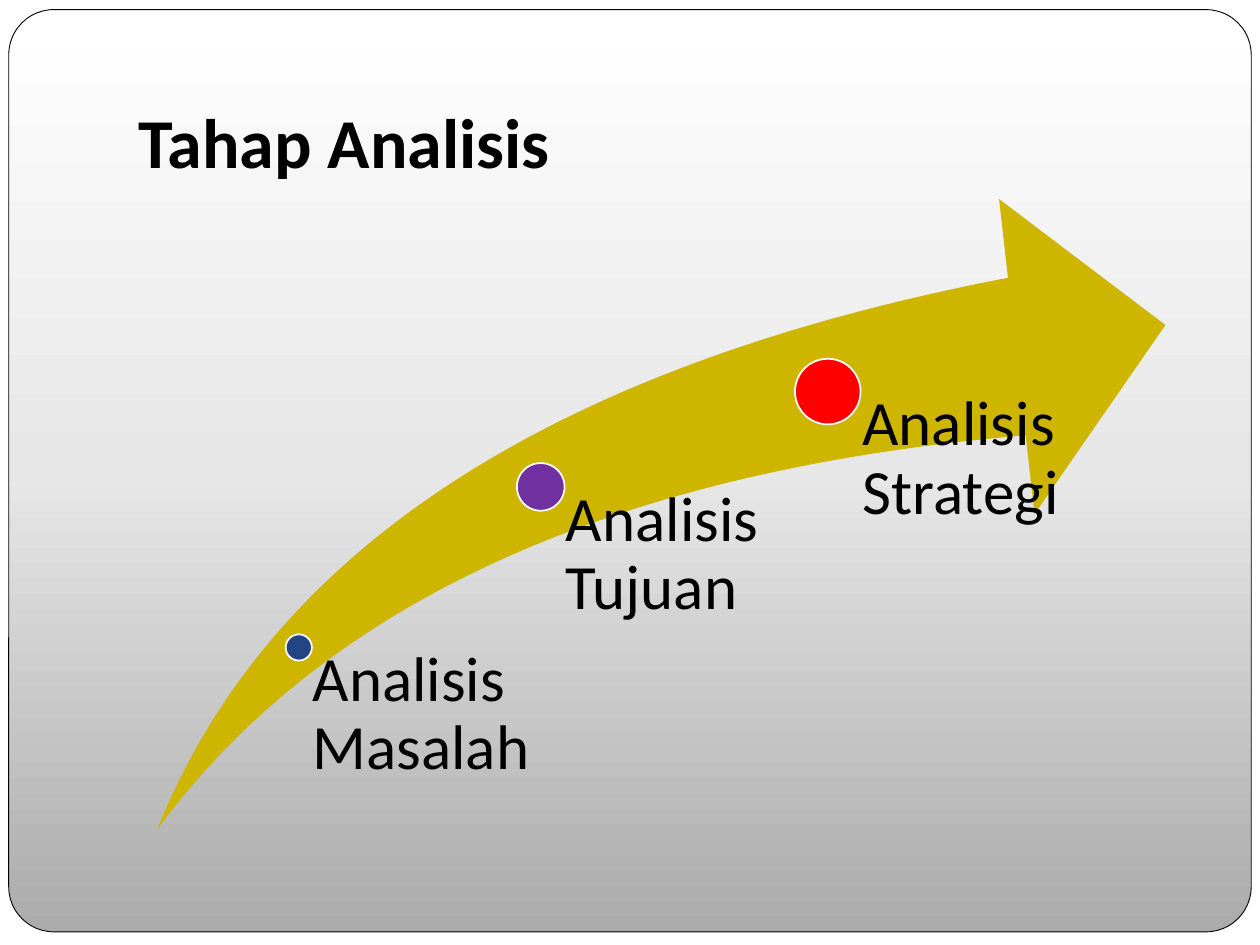
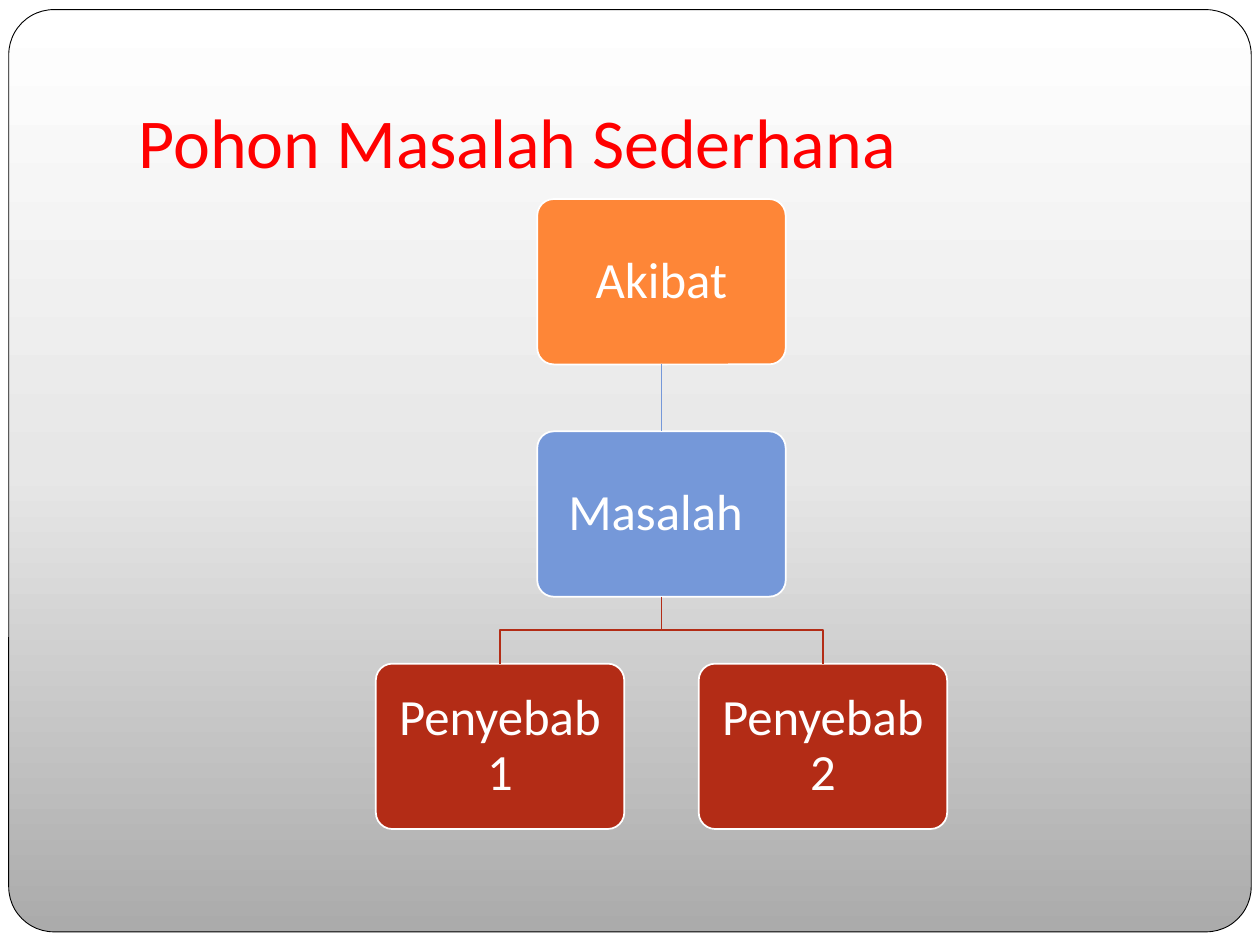
from copy import deepcopy

from lxml.etree import SubElement
from pptx import Presentation
from pptx.dml.color import RGBColor
from pptx.enum.shapes import MSO_CONNECTOR, MSO_SHAPE
from pptx.enum.text import MSO_ANCHOR, MSO_AUTO_SIZE, PP_ALIGN
from pptx.oxml.ns import qn
from pptx.util import Pt

FONT = "Calibri"
COLORS = {
    "black": "000000", "white": "FFFFFF", "red": "FF0000",
    "gold": "CEB500", "navy": "244583", "purple": "7030A0",
    "orange": "FE8637", "blue": "7598D9", "brick": "B32C16",
    "shade_bottom": "ABABAB", "shade_middle": "E7E7E7",
}
RGB = {name: RGBColor.from_string(value) for name, value in COLORS.items()}


def add_figure(shapes, kind, left, top, width, height, fill, line=None, line_width=1):
    """Add a shadowless preset shape, measured in points; no line unless one is named."""
    figure = shapes.add_shape(kind, Pt(left), Pt(top), Pt(width), Pt(height))
    figure.shadow.inherit = False
    figure.fill.solid()
    figure.fill.fore_color.rgb = RGB[fill]
    if line:
        figure.line.color.rgb = RGB[line]
        figure.line.width = Pt(line_width)
    else:
        figure.line.fill.background()
    return figure


def write_text(frame, text, size, color, align=PP_ALIGN.LEFT, spacing=0.9):
    frame.word_wrap = True
    frame.text = text
    paragraph = frame.paragraphs[0]
    paragraph.alignment = align
    paragraph.line_spacing = spacing
    font = paragraph.runs[0].font
    font.name = FONT
    font.size = Pt(size)
    font.color.rgb = RGB[color]
    return font


prs = Presentation()
prs.slide_width, prs.slide_height = Pt(720), Pt(540)
layout = prs.slide_layouts[5]
analysis = prs.slides.add_slide(layout)
tree = prs.slides.add_slide(layout)

# Shared layout: shaded rounded panel on white, title above the diagram
page = add_figure(analysis.shapes, MSO_SHAPE.RECTANGLE, 0, 0, 720, 540, "white")
panel = add_figure(analysis.shapes, MSO_SHAPE.ROUNDED_RECTANGLE, 5, 5.5, 710, 527,
                   "white", "black", 0.5)
panel.adjustments[0] = 0.049
for owner, fill in ((layout, layout.background.fill), (panel, panel.fill)):
    fill.gradient()
    fill.gradient_angle = 90
    stop_list = owner.element.find(".//" + qn("a:gsLst"))
    stop_list.append(deepcopy(stop_list[0]))
    shades = ("shade_bottom", "shade_middle", "white")
    for index, (stop, shade) in enumerate(zip(fill.gradient_stops, shades)):
        stop.position = index / 2
        stop.color.rgb = RGB[shade]
for index, backdrop in enumerate((page, panel), start=2):
    layout.shapes.element.insert(index, backdrop.element)

heading = layout.placeholders[0]
heading.left, heading.top, heading.width, heading.height = Pt(72), Pt(21.6), Pt(612), Pt(90)
heading.text_frame.vertical_anchor = MSO_ANCHOR.BOTTOM
heading.text_frame.auto_size = MSO_AUTO_SIZE.NONE
heading.text_frame.margin_bottom = Pt(7.2)

for slide, title, color, bold in (
    (analysis, "Tahap Analisis", "black", True),
    (tree, "Pohon Masalah Sederhana", "red", False),
):
    font = write_text(slide.shapes.title.text_frame, title, 40, color, spacing=1)
    font.bold = bold

DIAGRAM_TOP, DIAGRAM_HEIGHT = 113.75, 360

# Slide 1: three stages along a rising arrow
arrow = add_figure(analysis.shapes, MSO_SHAPE.SWOOSH_ARROW, 90, DIAGRAM_TOP,
                   576, DIAGRAM_HEIGHT, "gold")
arrow.adjustments[0] = arrow.adjustments[1] = 0.25

for stage, x, y, diameter, color, width in (
    ("Analisis Masalah", 170.75, 370, 15, "navy", 134),
    ("Analisis Tujuan", 309, 278.25, 27.25, "purple", 138),
    ("Analisis Strategi", 473, 223.75, 37.5, "red", 138),
):
    add_figure(analysis.shapes, MSO_SHAPE.OVAL, x - diameter / 2, y - diameter / 2,
               diameter, diameter, color, "white")
    label = analysis.shapes.add_textbox(
        Pt(x), Pt(y), Pt(width), Pt(DIAGRAM_TOP + DIAGRAM_HEIGHT - y)).text_frame
    label.margin_left = Pt(0.53 * diameter)
    label.margin_top = label.margin_right = label.margin_bottom = 0
    write_text(label, stage, 36, "black")

# Slide 2: effect, problem and two causes
BOX_WIDTH, BOX_HEIGHT, GAP = 142, 94.5, 38.25
CENTER, CAUSE_OFFSET = 378, 92.25
nodes = []
for text, row, x, color in (
    ("Akibat", 0, CENTER, "orange"),
    ("Masalah ", 1, CENTER, "blue"),
    ("Penyebab 1", 2, CENTER - CAUSE_OFFSET, "brick"),
    ("Penyebab 2", 2, CENTER + CAUSE_OFFSET, "brick"),
):
    node = add_figure(tree.shapes, MSO_SHAPE.ROUNDED_RECTANGLE, x - BOX_WIDTH / 2,
                      DIAGRAM_TOP + row * (BOX_HEIGHT + GAP), BOX_WIDTH, BOX_HEIGHT,
                      color, "white")
    node.adjustments[0] = 0.1
    frame = node.text_frame
    frame.margin_left = frame.margin_top = frame.margin_right = frame.margin_bottom = Pt(8.6)
    frame.vertical_anchor = MSO_ANCHOR.MIDDLE
    write_text(frame, text, 29, "white", PP_ALIGN.CENTER)
    nodes.append(node)

effect, problem, *causes = nodes
link = tree.shapes.add_connector(MSO_CONNECTOR.STRAIGHT, 0, 0, 0, 0)
link.begin_connect(effect, 2)
link.end_connect(problem, 0)
link.line.color.rgb = RGB["blue"]
link.line.width = Pt(1)
SubElement(link.element.spPr, qn("a:effectLst"))

fork_top = problem.top + problem.height
fork_middle = fork_top + Pt(GAP / 2)
for cause in causes:
    cause_x = cause.left + cause.width // 2
    builder = tree.shapes.build_freeform(Pt(CENTER), fork_top)
    builder.add_line_segments(
        [(Pt(CENTER), fork_middle), (cause_x, fork_middle), (cause_x, cause.top)], close=False)
    branch = builder.convert_to_shape()
    branch.shadow.inherit = False
    branch.fill.background()
    branch.line.color.rgb = RGB["brick"]
    branch.line.width = Pt(1)

prs.save("out.pptx")
